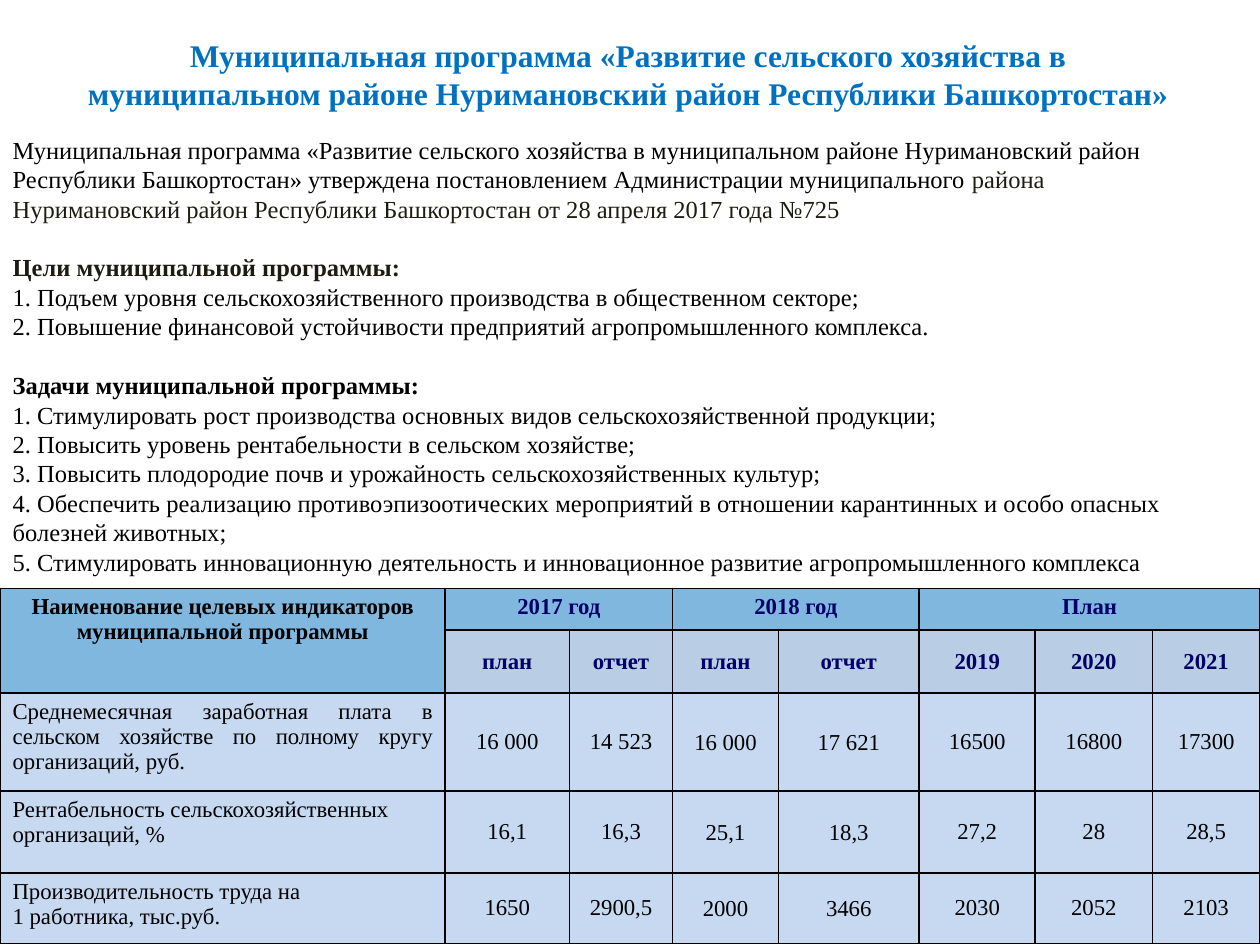
from pptx import Presentation
from pptx.dml.color import RGBColor
from pptx.enum import text as t
from pptx.oxml import parse_xml
from pptx.oxml.ns import nsdecls, qn
from pptx.util import Cm, Pt
from lxml import etree

FONT = "Times New Roman"
BLACK, DARK, NAVY, BLUE = "000000", "1E1C11", "000066", "0070C0"
SUBHEADER_FILL, BODY_FILL = "B9CDE5", "C6D9F1"
CENTER, LEFT, JUSTIFY = t.PP_ALIGN.CENTER, t.PP_ALIGN.LEFT, t.PP_ALIGN.JUSTIFY

TITLE = ["Муниципальная программа «Развитие сельского хозяйства в",
         "муниципальном районе Нуримановский район Республики Башкортостан»"]
DECREE = ("Муниципальная программа «Развитие сельского хозяйства в муниципальном районе "
          "Нуримановский район Республики Башкортостан» утверждена постановлением "
          "Администрации муниципального ")
DECREE_DATE = "района Нуримановский район Республики Башкортостан от 28 апреля 2017 года №725"
SECTIONS = [
    ("Цели муниципальной программы:", DARK, [
        "1. Подъем уровня сельскохозяйственного производства в общественном секторе;",
        "2. Повышение финансовой устойчивости предприятий агропромышленного комплекса."]),
    ("Задачи муниципальной программы:", BLACK, [
        "1. Стимулировать рост производства основных видов сельскохозяйственной продукции;",
        "2. Повысить уровень рентабельности в сельском хозяйстве;",
        "3. Повысить плодородие почв и урожайность сельскохозяйственных культур;",
        "4. Обеспечить реализацию противоэпизоотических мероприятий в отношении карантинных "
        "и особо опасных болезней животных;",
        "5. Стимулировать инновационную деятельность и инновационное развитие "
        "агропромышленного комплекса"]),
]

COLUMN_WIDTHS = [8.97, 2.51, 2.08, 2.13, 2.84, 2.34, 2.36, 2.17]
ROW_HEIGHTS = [0.84, 1.27, 1.98, 1.65, 1.42]
INDICATOR_HEADER = "Наименование целевых индикаторов\nмуниципальной программы"
PERIODS = [("2017 год", 1, 2), ("2018 год", 3, 4), ("План", 5, 7)]
SUBHEADERS = ["план", "отчет", "план", "отчет", "2019", "2020", "2021"]
INDICATORS = [
    ("Среднемесячная заработная плата в сельском хозяйстве по полному кругу организаций, руб.",
     JUSTIFY, ["16 000", "14 523", "16 000", "17 621", "16500", "16800", "17300"]),
    ("Рентабельность сельскохозяйственных организаций, %",
     LEFT, ["16,1", "16,3", "25,1", "18,3", "27,2", "28", "28,5"]),
    ("Производительность труда на\n1 работника, тыс.руб.",
     JUSTIFY, ["1650", "2900,5", "2000", "3466", "2030", "2052", "2103"]),
]
NARROW_MARGIN_COLUMNS = (3, 4)


def color(hex_code):
    return RGBColor.from_string(hex_code)


def format_paragraph(paragraph, size, hex_code, bold=False, align=LEFT):
    paragraph.alignment = align
    font = paragraph.font
    font.name, font.size, font.bold = FONT, Pt(size), bold
    font.color.rgb = color(hex_code)


def place(placeholder, left, top, width, height):
    placeholder.left, placeholder.top = Cm(left), Cm(top)
    placeholder.width, placeholder.height = Cm(width), Cm(height)
    frame = placeholder.text_frame
    frame.word_wrap = True
    frame.auto_size = t.MSO_AUTO_SIZE.NONE
    frame.vertical_anchor = t.MSO_ANCHOR.TOP
    return frame


def fill_title(title):
    frame = place(title, 1.25, 0.6, 22.83, 2.1)
    frame.text = "\n".join(TITLE)
    for line in frame.paragraphs:
        line.line_spacing = Pt(21.7)
        format_paragraph(line, 18, BLUE, True, CENTER)


def format_body_line(paragraph, hex_code=BLACK, bold=False, gap=0):
    """Plain line without bullet or indent."""
    paragraph.line_spacing = Pt(16.8)
    paragraph.space_before = Pt(gap)
    properties = paragraph._p.get_or_add_pPr()
    properties.set("marL", "0")
    properties.set("indent", "0")
    etree.SubElement(properties, qn("a:buNone"))
    format_paragraph(paragraph, 14, hex_code, bold)


def fill_body(body):
    frame = place(body, 0, 2.59, 24.61, 9.25)
    decree = frame.paragraphs[0]
    decree.add_run().text = DECREE
    date = decree.add_run()
    date.text = DECREE_DATE
    date.font.color.rgb = color(DARK)
    format_body_line(decree)
    for heading, heading_color, items in SECTIONS:
        paragraph = frame.add_paragraph()
        paragraph.text = heading
        format_body_line(paragraph, heading_color, True, gap=16.8)
        for item in items:
            paragraph = frame.add_paragraph()
            paragraph.text = item
            format_body_line(paragraph)


def add_borders(cell):
    properties = cell._tc.get_or_add_tcPr()
    for index, side in enumerate(("lnL", "lnR", "lnT", "lnB")):
        properties.insert(index, parse_xml(
            f'<a:{side} {nsdecls("a")} w="12700"><a:solidFill>'
            f'<a:srgbClr val="{BLACK}"/></a:solidFill></a:{side}>'))


def fill_cell(cell, content, fill, hex_code=BLACK, bold=False, align=CENTER,
              anchor=t.MSO_ANCHOR.MIDDLE, alpha=None):
    cell.text = content
    cell.vertical_anchor = anchor
    for paragraph in cell.text_frame.paragraphs:
        format_paragraph(paragraph, 13, hex_code, bold, align)
    cell.fill.solid()
    cell.fill.fore_color.rgb = color(fill)
    if alpha:
        rgb = cell._tc.tcPr.find(".//" + qn("a:srgbClr"))
        etree.SubElement(rgb, qn("a:alpha")).set("val", str(alpha * 1000))


def add_indicator_table(slide):
    table = slide.shapes.add_table(
        len(ROW_HEIGHTS), len(COLUMN_WIDTHS), Cm(0), Cm(11.86),
        Cm(25.4), Cm(sum(ROW_HEIGHTS))).table
    for column, width in zip(table.columns, COLUMN_WIDTHS):
        column.width = Cm(width)
    for row, height in zip(table.rows, ROW_HEIGHTS):
        row.height = Cm(height)

    header = dict(fill=BLUE, bold=True, anchor=t.MSO_ANCHOR.TOP, alpha=50)
    for column in range(len(COLUMN_WIDTHS)):
        fill_cell(table.cell(0, column), "", **header)
    fill_cell(table.cell(1, 0), "", **header)
    fill_cell(table.cell(0, 0), INDICATOR_HEADER, **header)
    table.cell(0, 0).merge(table.cell(1, 0))
    for period, first, last in PERIODS:
        fill_cell(table.cell(0, first), period, hex_code=NAVY, **header)
        table.cell(0, first).merge(table.cell(0, last))

    for column, label in enumerate(SUBHEADERS, 1):
        fill_cell(table.cell(1, column), label, SUBHEADER_FILL, NAVY, True)
    for row, (name, align, values) in enumerate(INDICATORS, 2):
        fill_cell(table.cell(row, 0), name, BODY_FILL, align=align, anchor=t.MSO_ANCHOR.TOP)
        for column, value in enumerate(values, 1):
            cell = table.cell(row, column)
            fill_cell(cell, value, BODY_FILL)
            if column in NARROW_MARGIN_COLUMNS:
                cell.margin_left = cell.margin_right = cell.margin_top = Cm(0.03)
                cell.margin_bottom = 0
    for cell in table.iter_cells():
        add_borders(cell)


def main():
    presentation = Presentation()
    presentation.slide_width, presentation.slide_height = Cm(25.4), Cm(19.05)
    slide = presentation.slides.add_slide(presentation.slide_layouts[1])
    fill_body(slide.placeholders[1])
    add_indicator_table(slide)
    fill_title(slide.shapes.title)
    presentation.save("out.pptx")


if __name__ == "__main__":
    main()
